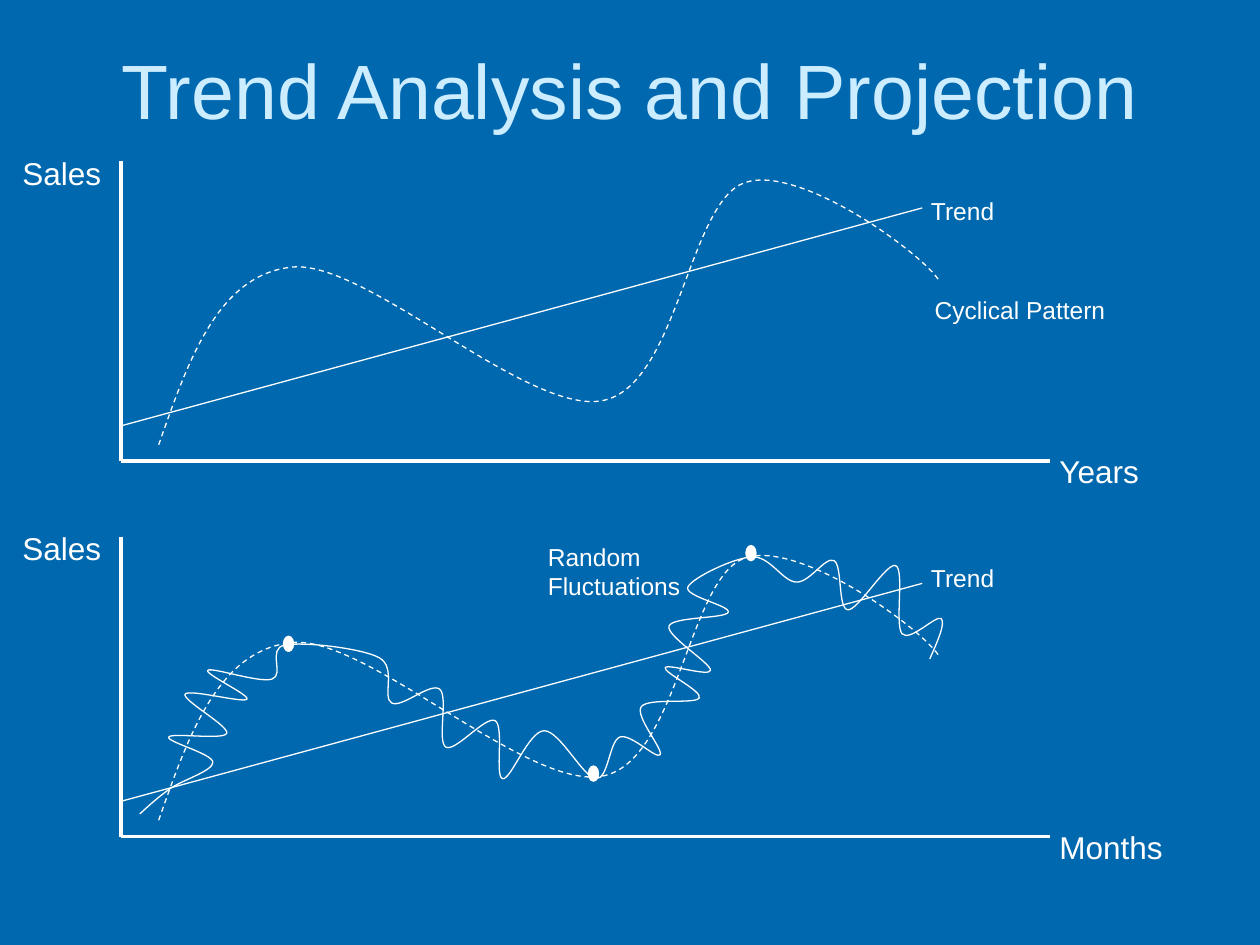
from lxml import etree
from pptx import Presentation
from pptx.dml.color import RGBColor
from pptx.enum.dml import MSO_LINE
from pptx.enum.shapes import MSO_CONNECTOR, MSO_SHAPE
from pptx.enum.text import MSO_ANCHOR, MSO_AUTO_SIZE, PP_ALIGN
from pptx.oxml.ns import qn
from pptx.util import Inches, Pt

BLUE = RGBColor(0x00, 0x68, 0xAE)
PALE = RGBColor(0xCC, 0xEC, 0xFF)
WHITE = RGBColor(0xFF, 0xFF, 0xFF)
DASH, OVAL, STRAIGHT = MSO_LINE.DASH, MSO_SHAPE.OVAL, MSO_CONNECTOR.STRAIGHT
MIDDLE, CENTER, GROW = MSO_ANCHOR.MIDDLE, PP_ALIGN.CENTER, MSO_AUTO_SIZE.SHAPE_TO_FIT_TEXT
COLS, ROWS = 100, 75
FONT = "Arial"
THIN, THICK = 0.75, 2
SMALL, LARGE, HUGE = 14, 18, 44

LEFT, RIGHT = 9.6, 83.3
GAP = 29.8
PANELS = [(0, "Years", 15.1), (GAP, "Months", 44.2)]
CYCLE = [(12.6, 35.3), (23.2, 21.2), (47.8, 31.8), (59.1, 14.5), (74.6, 22.4)]
CYCLE_END = (0.9, 1.9)
NOISE = [
    (11.1, 64.6), (13.5, 62.6), (16.9, 60.5), (13.4, 58.5), (18, 58.2), (14.7, 55.1),
    (19.6, 55.5), (16.5, 53.2), (21.6, 53.9), (22.6, 51.2), (30.1, 52.2), (31.1, 55.8),
    (34.9, 54.7), (35.4, 59.3), (39.3, 57.2), (39.9, 61.8), (43.2, 58), (47.3, 61.8),
    (49.2, 58.5), (52.4, 59.9), (50.9, 56.1), (55.5, 55.4), (52.8, 53), (56.4, 53.2),
    (53.1, 49.7), (57.8, 48.6), (54.6, 46.6), (59.7, 44.2), (63.2, 46.2), (66.2, 44.5),
    (67.3, 48.4), (71.1, 44.9), (71.6, 50.3), (74.7, 49.1), (73.8, 52.3),
]
TURNS = [(22.9, 51.1), (47.1, 61.4), (59.6, 43.9)]


def bends(knots, end=None):
    """Return the two control points of each Catmull-Rom segment."""
    slopes = [((c[0] - a[0]) / 6, (c[1] - a[1]) / 6) for a, c in zip(knots, knots[2:])]
    outs = [(x + u, y + v) for (x, y), (u, v) in zip(knots[1:], slopes)]
    ins = [(x - u, y - v) for (x, y), (u, v) in zip(knots[1:], slopes)]
    (x, y), (u, v) = knots[0], ins[0]
    outs.insert(0, ((x + u) / 2, (y + v) / 2))
    (x, y), (u, v) = knots[-1], outs[-1]
    ins.append((x - end[0], y - end[1]) if end else ((x + u) / 2, (y + v) / 2))
    return zip(outs, ins)


class Board:
    """Draws styled elements on one slide, placed by grid columns and rows."""

    def __init__(self, deck):
        self.col = deck.slide_width / COLS
        self.row = deck.slide_height / ROWS
        self.slide = deck.slides.add_slide(deck.slide_layouts[6])
        self.shapes = self.slide.shapes
        fill = self.slide.background.fill
        fill.solid()
        fill.fore_color.rgb = BLUE

    def spot(self, x, y):
        return round(x * self.col), round(y * self.row)

    def ink(self, line, width=THIN):
        line.color.rgb = WHITE
        line.width = Pt(width)

    def text(self, words, x, y, wide, high, size, color=WHITE):
        box = self.shapes.add_textbox(*self.spot(x, y), *self.spot(wide, high))
        frame = box.text_frame
        frame.word_wrap = True
        frame.auto_size = GROW
        frame.text = words
        para = frame.paragraphs[0]
        para.font.name = FONT
        para.font.size = Pt(size)
        para.font.color.rgb = color
        return frame

    def title(self, words):
        frame = self.text(words, 5, 0.8, 90, 12.5, HUGE, PALE)
        frame.auto_size = MSO_AUTO_SIZE.NONE
        frame.vertical_anchor = MIDDLE
        frame.paragraphs[0].alignment = CENTER

    def line(self, start, end, width=THIN):
        link = self.shapes.add_connector(STRAIGHT, *self.spot(*start), *self.spot(*end))
        self.ink(link.line, width)
        etree.SubElement(link._element.spPr, qn("a:effectLst"))

    def dot(self, x, y, wide=0.8, high=1.2):
        corner = self.spot(x - wide / 2, y - high / 2)
        dot = self.shapes.add_shape(OVAL, *corner, *self.spot(wide, high))
        dot.shadow.inherit = False
        dot.fill.solid()
        dot.fill.fore_color.rgb = WHITE
        self.ink(dot.line)

    def curve(self, knots, end=None, dash=None):
        spots = [self.spot(*knot) for knot in knots]
        pen = self.shapes.build_freeform(*spots[0])
        pen.add_line_segments(spots[1:], close=False)
        curve = pen.convert_to_shape()
        curve.shadow.inherit = False
        curve.fill.background()
        self.ink(curve.line)
        curve.line.dash_style = dash
        steps = list(curve._element.iter(qn("a:lnTo")))
        for step, pair in zip(steps, bends(knots, end)):
            arc = etree.Element(qn("a:cubicBezTo"))
            for point in pair:
                x, y = self.spot(*point)
                node = etree.SubElement(arc, qn("a:pt"))
                node.set("x", str(x - curve.left))
                node.set("y", str(y - curve.top))
            arc.append(step[0])
            step.getparent().replace(step, arc)

    def panel(self, drop, unit, label):
        base = 36.6 + drop
        self.line((LEFT, 12.8 + drop), (LEFT, base), THICK)
        self.line((RIGHT, base), (LEFT, base), THICK)
        self.line((LEFT, 33.8 + drop), (73.2, 16.5 + drop))
        self.curve([(x, y + drop) for x, y in CYCLE], CYCLE_END, DASH)
        self.text("Sales", 0.8, 11.7 + drop, 9.6, 4, LARGE)
        self.text(unit, 83.1, 35.4 + drop, 11.1, 4, LARGE)
        self.text("Trend", 72.9, label, 9.5, 3.4, SMALL)


def main():
    deck = Presentation()
    deck.slide_width, deck.slide_height = Inches(10), Inches(7.5)
    board = Board(deck)
    board.title("Trend Analysis and Projection")
    for panel in PANELS:
        board.panel(*panel)
    board.text("Cyclical Pattern", 73.2, 22.9, 21.9, 3.4, SMALL)
    board.curve(NOISE)
    board.text("Random Fluctuations", 42.5, 42.5, 13.3, 5.7, SMALL)
    for turn in TURNS:
        board.dot(*turn)
    deck.save("out.pptx")


if __name__ == "__main__":
    main()
